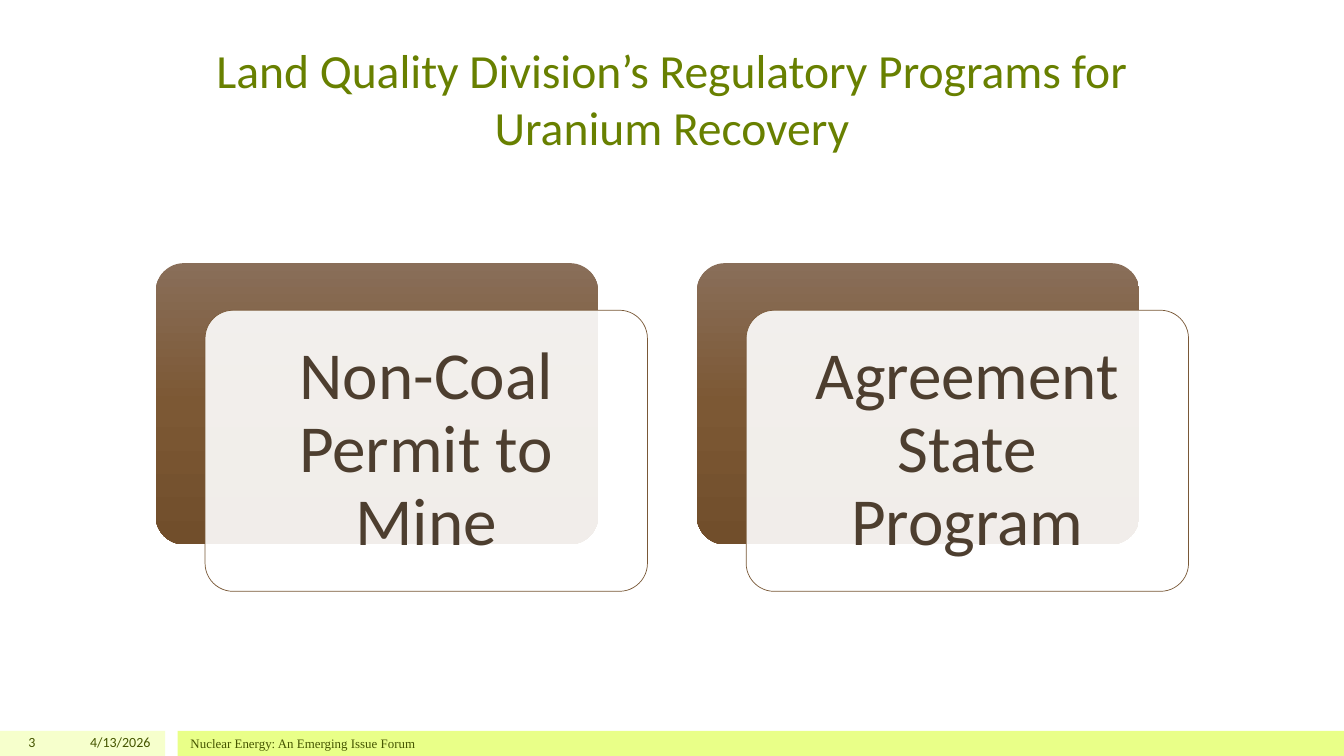
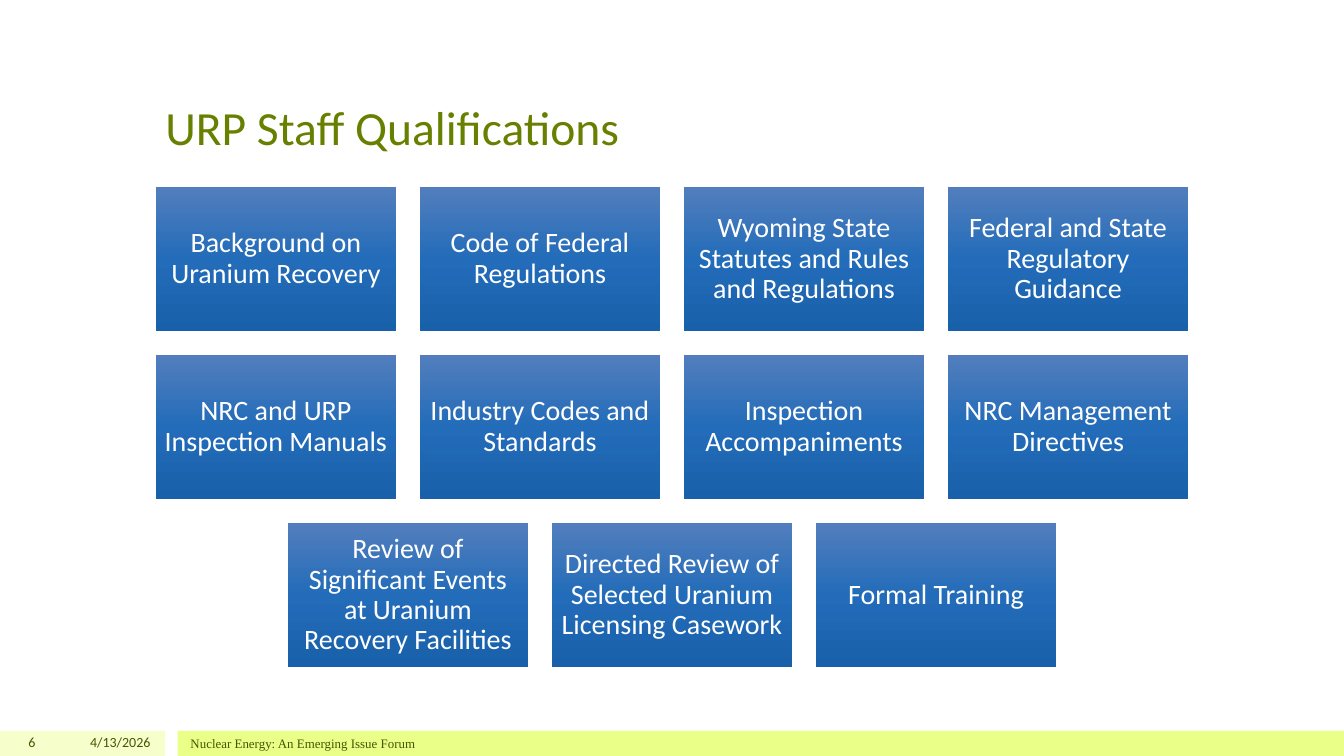
"""Build two slides on uranium recovery regulation and staff qualifications."""
from copy import deepcopy

from pptx import Presentation
from pptx.dml.color import RGBColor as RGB
from pptx.enum.shapes import MSO_SHAPE as SHAPE
from pptx.enum.text import MSO_ANCHOR as ANCHOR, MSO_AUTO_SIZE as AUTO, PP_ALIGN as ALIGN
from pptx.oxml.ns import qn
from pptx.util import Pt

COLORS = {
    "title": "688000",
    "footer": "455500",
    "band_light": "F6FFCC",
    "band": "E9FF88",
    "card_line": "795837",
    "card_text": "4D3E2F",
    "white": "FFFFFF",
}
BROWN = ["896E59", "7C5834", "714E2B"]
BLUE = ["527EBD", "236CB9", "1960AA"]


def write(sp, text, size, color, font="Calibri", align=ALIGN.CENTER,
          anchor=ANCHOR.MIDDLE, spacing=1.0, inset=(7.2, 3.6)):
    tf = sp.text_frame
    tf.word_wrap = True
    tf.auto_size = AUTO.NONE
    tf.vertical_anchor = anchor
    tf.margin_left = tf.margin_right = Pt(inset[0])
    tf.margin_top = tf.margin_bottom = Pt(inset[1])
    p = tf.paragraphs[0]
    p.alignment = align
    p.line_spacing = spacing
    r = p.add_run()
    r.text = text
    r.font.size = Pt(size)
    r.font.name = font
    r.font.color.rgb = RGB.from_string(COLORS[color])


def add_box(slide, kind, x, y, w, h, fill):
    sp = slide.shapes.add_shape(kind, Pt(x), Pt(y), Pt(w), Pt(h))
    sp.shadow.inherit = False
    sp.line.fill.background()
    if isinstance(fill, list):
        sp.fill.gradient()
        sp.fill.gradient_angle = 270
        gs_list = sp.element.find(".//" + qn("a:gsLst"))
        gs_list.insert(1, deepcopy(gs_list[0]))
        for i, (stop, color) in enumerate(zip(sp.fill.gradient_stops, fill)):
            stop.position = i / 2
            stop.color.rgb = RGB.from_string(color)
    else:
        sp.fill.solid()
        sp.fill.fore_color.rgb = RGB.from_string(COLORS[fill])
    return sp


prs = Presentation()
prs.slide_width, prs.slide_height = Pt(960), Pt(540)
layout = prs.slide_layouts[5]
title = layout.placeholders[0]
title.left, title.top, title.width, title.height = Pt(111), Pt(21.6), Pt(738), Pt(93)

pages = [
    ("3", "Land Quality Division’s Regulatory Programs for Uranium Recovery", ALIGN.CENTER),
    ("6", "URP Staff Qualifications", ALIGN.LEFT),
]
slides = []
for number, heading, align in pages:
    s = prs.slides.add_slide(layout)
    write(s.shapes.title, heading, 34, "title", align=align, anchor=ANCHOR.BOTTOM)
    footers = [
        (0, 32.4, number, dict(size=10, align=ALIGN.RIGHT, spacing=0.9)),
        (36, 78.5, "4/13/2026", dict(size=10, align=ALIGN.RIGHT, spacing=0.9)),
        (129, 720, "Nuclear Energy: An Emerging Issue Forum",
         dict(size=9.2, align=ALIGN.LEFT, font="Times New Roman")),
    ]
    for x, w, text, style in footers:
        sp = s.shapes.add_textbox(Pt(x), Pt(522), Pt(w), Pt(18))
        write(sp, text, color="footer", inset=(7.2, 0), **style)
    slides.append(s)
programs, staff = slides

for x, w, color in [(0, 118, "band_light"), (127, 833, "band")]:
    sp = add_box(programs, SHAPE.RECTANGLE, x, 522, w, 18, color)
    layout.shapes.element.append(sp.element)

card_w, card_h = 316, 200.8
for i, text in enumerate(["Non-Coal Permit to Mine", "Agreement State Program"]):
    x, y = 111.3 + i * 386.5, 188
    back = add_box(programs, SHAPE.ROUNDED_RECTANGLE, x, y, card_w, card_h, BROWN)
    front = add_box(programs, SHAPE.ROUNDED_RECTANGLE, x + 35.2, y + 33.6, card_w, card_h, "white")
    back.adjustments[0] = front.adjustments[0] = 0.1
    front.line.color.rgb = RGB.from_string(COLORS["card_line"])
    front.line.width = Pt(0.5)
    white = front.element.spPr.find(qn("a:solidFill"))[0]
    white.makeelement(qn("a:alpha"), {})
    alpha = white.makeelement(qn("a:alpha"), {"val": "90000"})
    white.append(alpha)
    write(front, text, 48, "card_text", spacing=0.9, inset=(14.4, 14.4))

topics = [
    ["Background on Uranium Recovery", "Code of Federal Regulations",
     "Wyoming State Statutes and Rules and Regulations",
     "Federal and State Regulatory Guidance"],
    ["NRC and URP Inspection Manuals", "Industry Codes and Standards",
     "Inspection Accompaniments", "NRC Management Directives"],
    ["Review of Significant Events at Uranium Recovery Facilities",
     "Directed Review of Selected Uranium Licensing Casework", "Formal Training"],
]
tile_w, tile_h, gap = 171.4, 102.8, 17.2
for row, names in enumerate(topics):
    row_w = len(names) * (tile_w + gap) - gap
    for col, name in enumerate(names):
        x = (960 - row_w) / 2 + col * (tile_w + gap)
        y = 133.6 + row * (tile_h + gap)
        sp = add_box(staff, SHAPE.RECTANGLE, x, y, tile_w, tile_h, BLUE)
        write(sp, name, 20, "white", spacing=0.9, inset=(5.5, 5.5))

prs.save("out.pptx")
